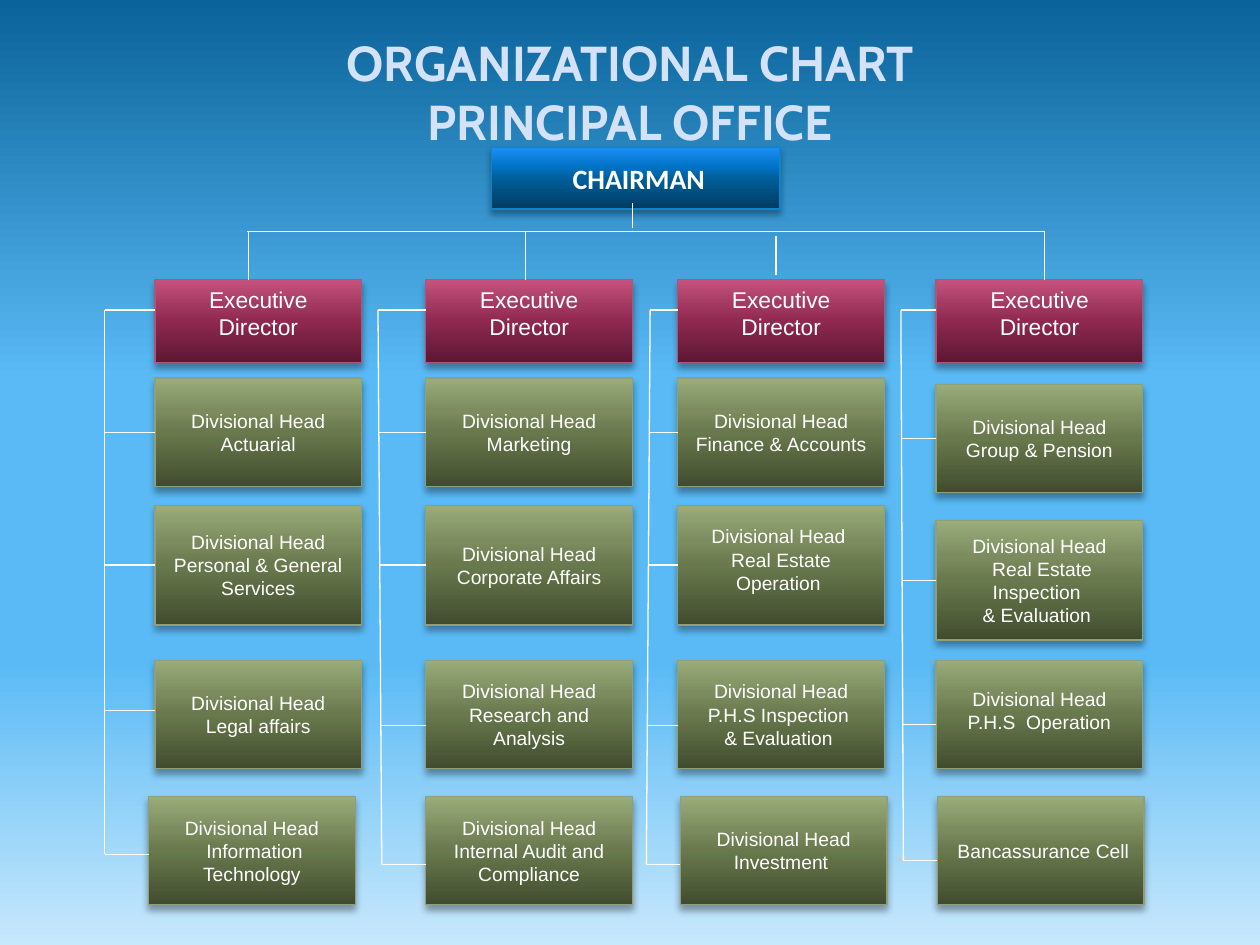
from copy import deepcopy
from dataclasses import dataclass

from lxml.etree import SubElement
from pptx import Presentation
from pptx.dml.color import RGBColor
from pptx.enum.shapes import MSO_CONNECTOR, MSO_SHAPE
from pptx.enum.text import MSO_ANCHOR, PP_ALIGN
from pptx.oxml.ns import qn
from pptx.util import Inches, Pt

TITLE = ["ORGANIZATIONAL CHART", "PRINCIPAL OFFICE"]
CHAIRMAN = " CHAIRMAN"
DIRECTOR = "Executive Director"
COLUMNS = [
    {"left": 1.23, "last_left": 1.18, "spine": (0.83, 0.83), "rungs": (5.64, 6.78),
     "drop": (1.97, 1.84, 2.22), "tops": (3, 4.01, 5.24, 6.32),
     "heads": ["Divisional Head Actuarial",
               "Divisional Head Personal & General Services",
               "Divisional Head Legal affairs",
               "Divisional Head\v Information Technology"]},
    {"left": 3.38, "last_left": 3.38, "spine": (3, 3.03), "rungs": (5.76, 6.86),
     "drop": (4.17, 1.84, 2.22), "tops": (3, 4.01, 5.24, 6.32),
     "heads": ["Divisional Head Marketing",
               "Divisional Head Corporate Affairs",
               "Divisional Head Research and Analysis",
               "Divisional Head Internal Audit and Compliance"]},
    {"left": 5.38, "last_left": 5.4, "spine": (5.16, 5.13), "rungs": (5.76, 6.86),
     "drop": (6.16, 1.87, 2.18), "tops": (3, 4.01, 5.24, 6.32),
     "heads": ["Divisional Head Finance & Accounts",
               "Divisional Head \vReal Estate\vOperation ",
               "Divisional Head P.H.S Inspection \v& Evaluation ",
               "Divisional Head Investment "]},
    {"left": 7.43, "last_left": 7.44, "spine": (7.15, 7.17), "rungs": (5.75, 6.83),
     "drop": (8.29, 1.84, 2.22), "tops": (3.05, 4.13, 5.24, 6.32),
     "heads": ["Divisional Head Group & Pension",
               "Divisional Head\v Real Estate Inspection \v& Evaluation ",
               "Divisional Head P.H.S  Operation",
               " Bancassurance Cell"]},
]
BOX_WIDTH = 1.64
HEAD_HEIGHTS = (0.86, 0.95, 0.86, 0.86)
DIRECTOR_TOP, DIRECTOR_HEIGHT, DIRECTOR_RUNG = 2.22, 0.66, 2.46
RAIL = (1.96, 8.29, 1.84)
RAISED_HEADS = {(2, 1): 0.14, (3, 2): 0.12}


@dataclass(frozen=True)
class Theme:
    title: str = "D4E2F8"
    white: str = "FFFFFF"
    shadow: str = "000000"
    sky: tuple = ((0, "0A639A"), (40, "5ABAF5"), (70, "5ABAF5"), (100, "C8E8FC"))
    blue: tuple = ((0, "003B60"), (50, "005F9A"), (70, "0074C8"), (100, "1C8FF6"))
    wine: tuple = ((0, "5B1731"), (50, "902850"), (70, "A33961"), (100, "C6537D"))
    olive: tuple = ((0, "414C2F"), (50, "69794D"), (70, "7C8C5F"), (100, "9BAD7B"))
    blue_edge: str = "0D84CD"
    wine_edge: str = "AD5778"
    olive_edge: str = "919E7A"
    line_width: float = 0.75
    title_size: int = 28
    chairman_size: int = 16
    director_size: int = 13
    head_size: int = 11


THEME = Theme()


def paint_gradient(fill, element, stops, angle):
    fill.gradient()
    fill.gradient_angle = angle
    stop_list = next(element.iter(qn("a:gsLst")))
    for stop in list(stop_list):
        stop_list.remove(stop)
    for position, color in stops:
        stop = SubElement(stop_list, qn("a:gs"), pos=str(position * 1000))
        SubElement(stop, qn("a:srgbClr"), val=color)


def write_text(box, paragraphs, size, font="Arial", color=THEME.white, bold=False,
               anchor=MSO_ANCHOR.MIDDLE, after=10, bottom=0.05):
    frame = box.text_frame
    frame.word_wrap = True
    frame.vertical_anchor = anchor
    frame.margin_bottom = Inches(bottom)
    for index, text in enumerate(paragraphs):
        para = frame.add_paragraph() if index else frame.paragraphs[0]
        para.text = text
        para.alignment = PP_ALIGN.CENTER
        para.space_after = Pt(after)
        for span in para.runs:
            span.font.name = font
            span.font.size = Pt(size)
            span.font.bold = bold
            span.font.color.rgb = RGBColor.from_string(color)
    span_format = next(box.element.iter(qn("a:rPr")))
    for line_break in box.element.iter(qn("a:br")):
        line_break.append(deepcopy(span_format))


def add_box(page, left, top, width, height, stops, edge, text, size, **text_format):
    box = page.shapes.add_shape(MSO_SHAPE.RECTANGLE, *map(Inches, (left, top, width, height)))
    paint_gradient(box.fill, box.element, stops, 90)
    box.line.color.rgb = RGBColor.from_string(edge)
    box.line.width = Pt(THEME.line_width)
    box.shadow.inherit = False
    effects = next(box.element.iter(qn("a:effectLst")))
    shadow = SubElement(effects, qn("a:outerShdw"), blurRad=str(Pt(4)), dist=str(Pt(3)),
                        dir="5400000", rotWithShape="0")
    shade = SubElement(shadow, qn("a:srgbClr"), val=THEME.shadow)
    SubElement(shade, qn("a:alpha"), val="35000")
    write_text(box, [text], size, **text_format)
    return box


def add_line(page, x1, y1, x2, y2, target=None):
    line = page.shapes.add_connector(MSO_CONNECTOR.STRAIGHT, *map(Inches, (x1, y1, x2, y2)))
    line.line.color.rgb = RGBColor.from_string(THEME.white)
    line.line.width = Pt(THEME.line_width)
    SubElement(line.element.spPr, qn("a:effectLst"))
    if target is not None:
        line.end_connect(target, 1)


def add_column(page, number, column):
    left, tops = column["left"], column["tops"]
    add_box(page, left, DIRECTOR_TOP, BOX_WIDTH, DIRECTOR_HEIGHT, THEME.wine, THEME.wine_edge,
            DIRECTOR, THEME.director_size, anchor=MSO_ANCHOR.TOP)
    drop_x, drop_top, drop_bottom = column["drop"]
    add_line(page, drop_x, drop_top, drop_x, drop_bottom)

    spine_top, spine_bottom = column["spine"]
    last_rung = column["rungs"][-1]
    add_line(page, spine_top, DIRECTOR_RUNG, spine_bottom, last_rung)
    add_line(page, spine_top, DIRECTOR_RUNG, left, DIRECTOR_RUNG)

    middles = [top + height / 2 for top, height in zip(tops[:2], HEAD_HEIGHTS)]
    rungs = [*middles, *column["rungs"]]
    for row, (text, top, height, rung) in enumerate(
            zip(column["heads"], tops, HEAD_HEIGHTS, rungs)):
        box_left = column["last_left"] if row == len(tops) - 1 else left
        head = add_box(page, box_left, top, BOX_WIDTH, height, THEME.olive, THEME.olive_edge,
                       text, THEME.head_size, bottom=RAISED_HEADS.get((number, row), 0.05))
        share = (rung - DIRECTOR_RUNG) / (last_rung - DIRECTOR_RUNG)
        start = spine_top + (spine_bottom - spine_top) * share
        add_line(page, start, rung, box_left, rung, head if row < len(middles) else None)


def main():
    deck = Presentation()
    deck.slide_width, deck.slide_height = Inches(10), Inches(7.5)
    page = deck.slides.add_slide(deck.slide_layouts[6])
    paint_gradient(page.background.fill, page.element, THEME.sky, 270)

    title = page.shapes.add_textbox(*map(Inches, (0, 0.21, 10, 1.04)))
    write_text(title, TITLE, THEME.title_size, font="Cabin", color=THEME.title, bold=True,
               anchor=MSO_ANCHOR.TOP, after=0)
    add_box(page, 3.9, 1.17, 2.29, 0.49, THEME.blue, THEME.blue_edge, CHAIRMAN,
            THEME.chairman_size, font="Calibri", bold=True)
    rail_left, rail_right, rail_y = RAIL
    add_line(page, rail_left, rail_y, rail_right, rail_y)
    add_line(page, 5.02, 1.61, 5.02, 1.81)
    for number, column in enumerate(COLUMNS):
        add_column(page, number, column)
    deck.save("out.pptx")


if __name__ == "__main__":
    main()
